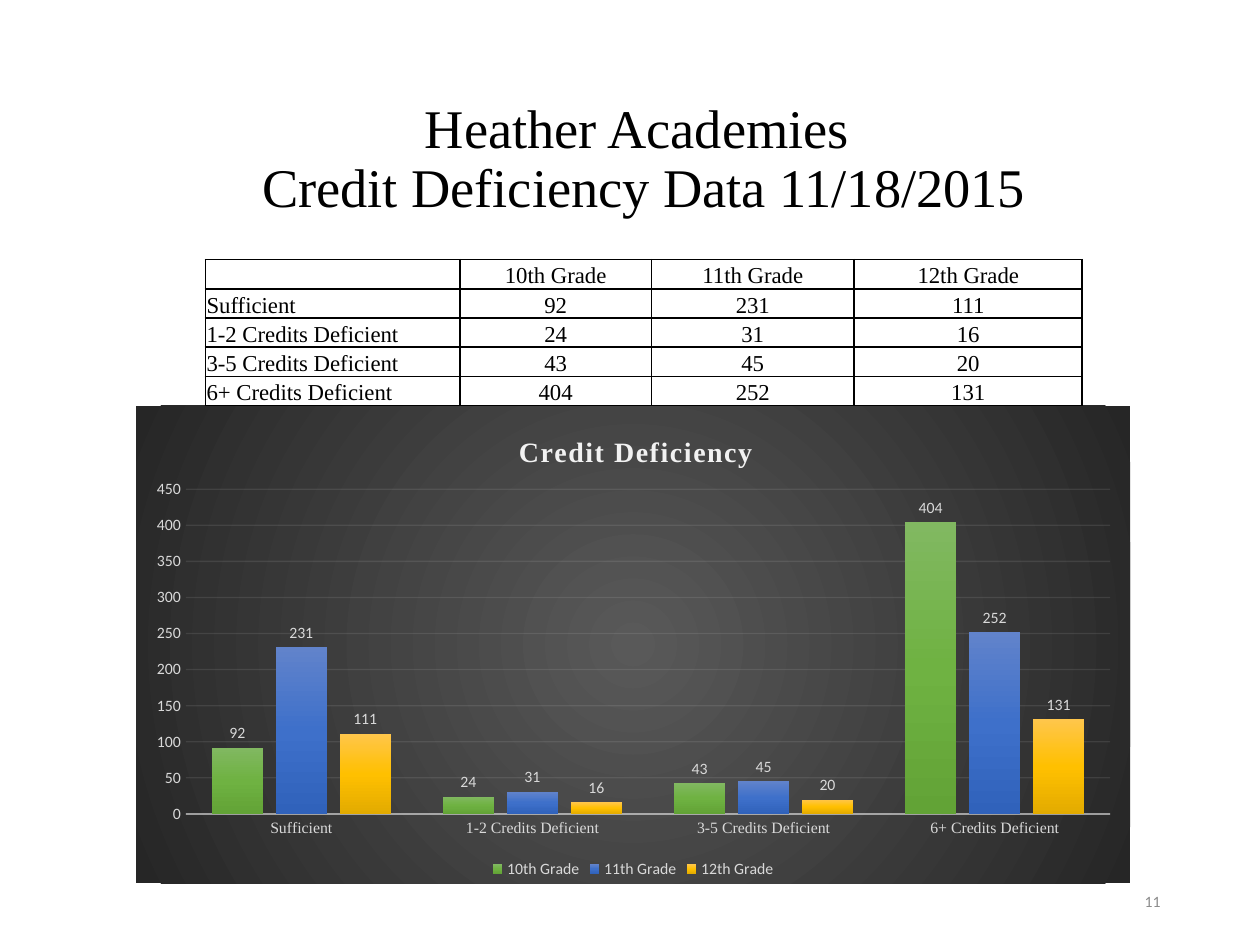
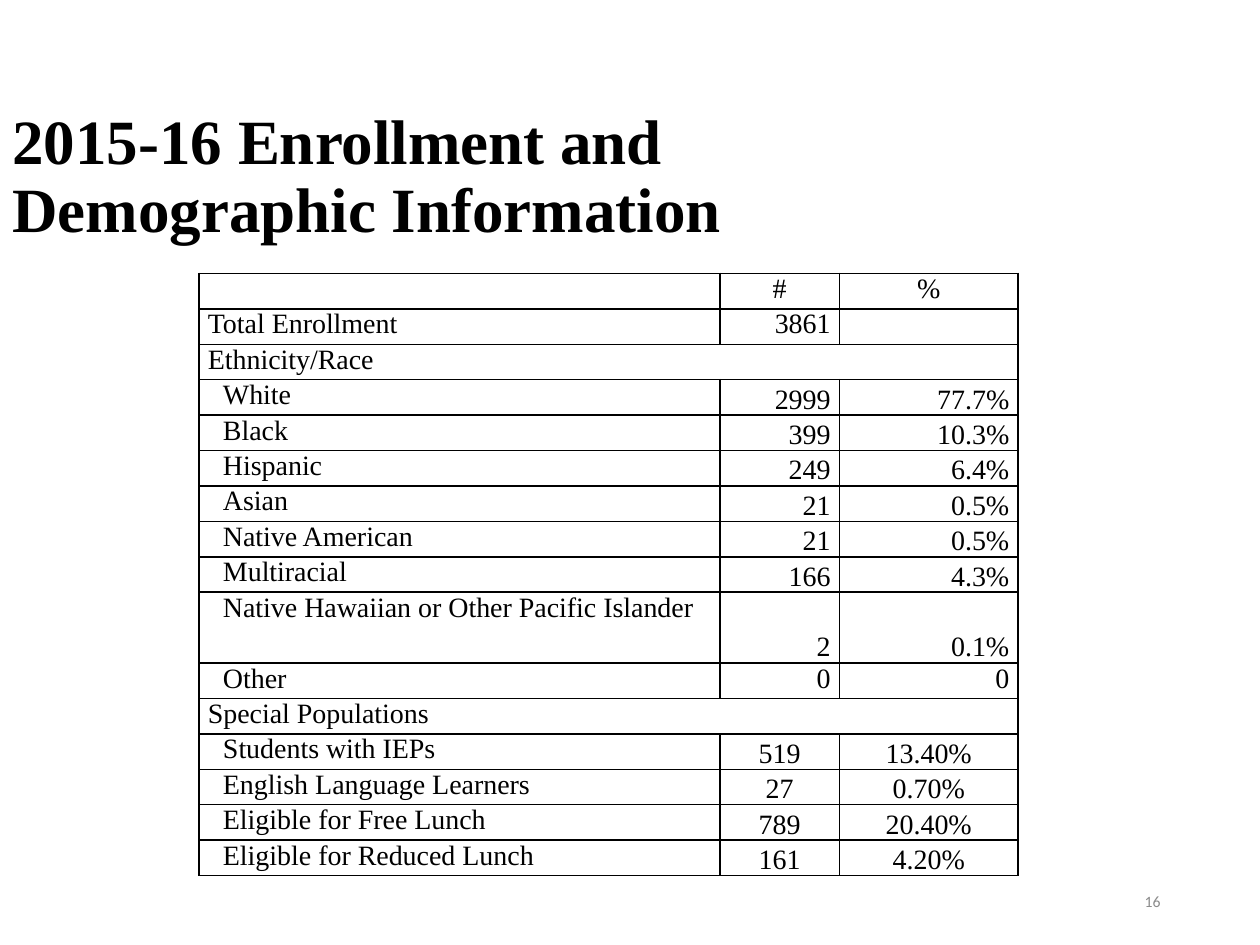
from dataclasses import dataclass

from lxml import etree
from pptx import Presentation
from pptx.chart.data import CategoryChartData
from pptx.dml.color import RGBColor
from pptx.enum.chart import XL_CHART_TYPE, XL_LABEL_POSITION, XL_LEGEND_POSITION, XL_TICK_MARK
from pptx.enum.text import MSO_ANCHOR, PP_ALIGN
from pptx.oxml.ns import qn
from pptx.util import Inches, Pt

LEFT, CENTER, RIGHT = PP_ALIGN.LEFT, PP_ALIGN.CENTER, PP_ALIGN.RIGHT
TOP, MIDDLE, BOTTOM = MSO_ANCHOR.TOP, MSO_ANCHOR.MIDDLE, MSO_ANCHOR.BOTTOM
NO_TICK = XL_TICK_MARK.NONE
COLUMNS = XL_CHART_TYPE.COLUMN_CLUSTERED
LEGEND_BOTTOM = XL_LEGEND_POSITION.BOTTOM
OUTSIDE_END = XL_LABEL_POSITION.OUTSIDE_END

SERIF, SANS = "Times New Roman", "Calibri"
BLACK, FOOTER_GRAY = "000000", "8C8C8C"
CHART_TEXT, CHART_LIGHT = "D9D9D9", "F2F2F2"
CHART_BACKGROUND = [(0, "595959"), (100, "262626")]

# The slide is a grid of 100 columns by 75 rows of square units
GRID_COLUMNS, GRID_ROWS = 100, 75
UNIT = Inches(0.1)

GRADES = ["10th Grade", "11th Grade", "12th Grade"]
GRADE_GRADIENTS = [
    [(0, "81B861"), (50, "6FB242"), (100, "62A336")],
    [(0, "6183CB"), (50, "3E70CA"), (100, "3062BB")],
    [(0, "FFC64B"), (50, "FFC000"), (100, "E3AB00")],
]
DEFICIENCY = {
    "Sufficient": [92, 231, 111],
    "1-2 Credits Deficient": [24, 31, 16],
    "3-5 Credits Deficient": [43, 45, 20],
    "6+ Credits Deficient": [404, 252, 131],
}
ETHNICITY = [
    ("White", "2999", "77.7%"),
    ("Black", "399", "10.3%"),
    ("Hispanic", "249", "6.4%"),
    ("Asian", "21", "0.5%"),
    ("Native American", "21", "0.5%"),
    ("Multiracial", "166", "4.3%"),
    ("Native Hawaiian or Other Pacific Islander", "2", "0.1%"),
]
SPECIAL_POPULATIONS = [
    ("Students with IEPs", "519", "13.40%"),
    ("English Language Learners", "27", "0.70%"),
    ("Eligible for Free Lunch", "789", "20.40%"),
    ("Eligible for Reduced Lunch", "161", "4.20%"),
]


@dataclass
class Box:
    left: float
    top: float
    width: float
    height: float

    def lengths(self):
        return [int(value * UNIT) for value in (self.left, self.top, self.width, self.height)]


@dataclass
class Entry:
    text: str = ""
    align: PP_ALIGN = LEFT
    anchor: MSO_ANCHOR = TOP
    indent: float = 0


FOOTER_BOX = Box(70.6, 69.5, 22.5, 4)


def color(hex_string):
    return RGBColor.from_string(hex_string)


def style_font(font, size, name=SERIF, hex_string=BLACK, bold=False):
    font.size, font.name, font.bold = Pt(size), name, bold
    font.color.rgb = color(hex_string)


def add_child(parent, tag, **attributes):
    return etree.SubElement(parent, qn(tag), {key: str(value) for key, value in attributes.items()})


# Text regions
def add_text(slide, box, text, size, name=SERIF, hex_string=BLACK, align=LEFT, bold=False, spacing=1.0):
    frame = slide.shapes.add_textbox(*box.lengths()).text_frame
    frame.word_wrap = True
    frame.vertical_anchor = MIDDLE
    paragraph = frame.paragraphs[0]
    paragraph.text = text
    paragraph.alignment = align
    paragraph.line_spacing = spacing
    for run in paragraph.runs:
        style_font(run.font, size, name, hex_string, bold)


def add_title(slide, box, text, size, **options):
    add_text(slide, box, text, size, spacing=0.9, **options)


def add_slide_number(slide, number):
    add_text(slide, FOOTER_BOX, str(number), 9, SANS, FOOTER_GRAY, RIGHT)


# Tables
def add_borders(cell):
    cell.fill.background()
    properties = cell._tc.get_or_add_tcPr()
    for position, side in enumerate(("a:lnL", "a:lnR", "a:lnT", "a:lnB")):
        border = add_child(properties, side, w=Pt(1))
        add_child(add_child(border, "a:solidFill"), "a:srgbClr", val=BLACK)
        properties.insert(position, border)


def fill_cell(cell, entry, size, margins):
    cell.margin_left, cell.margin_right, cell.margin_top, cell.margin_bottom = map(Inches, margins)
    cell.vertical_anchor = entry.anchor
    paragraph = cell.text_frame.paragraphs[0]
    paragraph.text = entry.text
    paragraph.alignment = entry.align
    if entry.indent:
        paragraph._p.get_or_add_pPr().set("marL", str(Inches(entry.indent)))
    for run in paragraph.runs:
        style_font(run.font, size)
    if not entry.text:
        add_child(paragraph._p, "a:endParaRPr", sz=size * 100)
    add_borders(cell)


def add_grid_table(slide, box, rows, column_shares, row_shares, size, margins):
    """Rows with a single entry span the whole width."""
    left, top, width, height = box.lengths()
    table = slide.shapes.add_table(len(rows), len(column_shares), left, top, width, height).table
    table.first_row = table.horz_banding = False
    for column, share in zip(table.columns, column_shares):
        column.width = int(width * share / sum(column_shares))
    for row, share in zip(table.rows, row_shares):
        row.height = int(height * share / sum(row_shares))
    last = len(column_shares) - 1
    for row_index, entries in enumerate(rows):
        padded = entries + [Entry()] * (last + 1 - len(entries))
        for column_index, entry in enumerate(padded):
            fill_cell(table.cell(row_index, column_index), entry, size, margins)
        if len(entries) == 1:
            table.cell(row_index, 0).merge(table.cell(row_index, last))


def add_deficiency_table(slide, box):
    def row(label, values):
        return [Entry(label, LEFT, BOTTOM)] + [Entry(str(value), CENTER, BOTTOM) for value in values]

    rows = [row("", GRADES)] + [row(label, values) for label, values in DEFICIENCY.items()]
    add_grid_table(slide, box, rows, [2.02, 1.52, 1.61, 1.81], [1] * len(rows), 13, (0.01, 0.01, 0.01, 0))


def add_demographics_table(slide, box):
    def group(records, align, anchor=BOTTOM):
        return [[Entry(label, indent=0.12), Entry(count, align, anchor), Entry(percent, align, anchor)]
                for label, count, percent in records]

    rows = [
        [Entry(), Entry("#", CENTER), Entry("%", CENTER)],
        [Entry("Total Enrollment"), Entry("3861", RIGHT), Entry()],
        [Entry("Ethnicity/Race")],
        *group(ETHNICITY, RIGHT),
        *group([("Other", "0", "0")], RIGHT, TOP),
        [Entry("Special Populations")],
        *group(SPECIAL_POPULATIONS, CENTER),
    ]
    row_shares = [2 if entries[0].text.startswith("Native Hawaiian") else 1 for entries in rows]
    add_grid_table(slide, box, rows, [4.14, 0.95, 1.42], row_shares, 16, (0.07, 0.07, 0, 0))


# Chart
def add_gradient(properties, stops):
    gradient = add_child(properties, "a:gradFill", rotWithShape=1)
    stop_list = add_child(gradient, "a:gsLst")
    for position, hex_string in stops:
        stop = add_child(stop_list, "a:gs", pos=position * 1000)
        add_child(stop, "a:srgbClr", val=hex_string)
    return gradient


def style_line(line, width, opacity):
    line.width = Pt(width)
    line.color.rgb = color(CHART_LIGHT)
    for line_color in line._get_or_add_ln().iter(qn("a:srgbClr")):
        add_child(line_color, "a:alpha", val=opacity * 1000)


def set_layout(parent, position, **shares):
    """Place a chart part by shares of the chart's size."""
    for old in parent.findall(qn("c:layout")):
        parent.remove(old)
    layout = add_child(parent, "c:layout")
    manual = add_child(layout, "c:manualLayout")
    if "w" in shares:
        add_child(manual, "c:layoutTarget", val="inner")
    for mode in ("c:xMode", "c:yMode"):
        add_child(manual, mode, val="edge")
    for key, share in shares.items():
        add_child(manual, f"c:{key}", val=share)
    parent.insert(position, layout)


def style_chart_frame(chart):
    chart_space = chart._chartSpace
    background = add_child(chart_space, "c:spPr")
    circle = add_child(add_gradient(background, CHART_BACKGROUND), "a:path", path="circle")
    add_child(circle, "a:fillToRect", l=50000, t=50000, r=50000, b=50000)
    add_child(add_child(background, "a:ln"), "a:noFill")
    chart_space.find(qn("c:chart")).addnext(background)

    title = chart.chart_title
    title.text_frame.text = "Credit Deficiency"
    run = title.text_frame.paragraphs[0].runs[0]
    style_font(run.font, 16, SERIF, CHART_LIGHT, True)
    run._r.get_or_add_rPr().set("spc", "100")
    title.include_in_layout = False
    set_layout(title._element, 1, x=0.38, y=0.05)
    set_layout(chart._chartSpace.chart.plotArea, 0, x=0.05, y=0.175, w=0.93, h=0.68)

    chart.has_legend = True
    chart.legend.position = LEGEND_BOTTOM
    chart.legend.include_in_layout = False
    style_font(chart.legend.font, 9, SANS, CHART_TEXT)


def style_axes(chart):
    for axis, name in ((chart.category_axis, SERIF), (chart.value_axis, SANS)):
        axis.major_tick_mark = axis.minor_tick_mark = NO_TICK
        style_font(axis.tick_labels.font, 9, name, CHART_TEXT)
    style_line(chart.category_axis.format.line, 1, 54)
    value_axis = chart.value_axis
    value_axis.minimum_scale, value_axis.maximum_scale, value_axis.major_unit = 0, 450, 50
    value_axis.format.line.fill.background()
    style_line(value_axis.major_gridlines.format.line, 0.75, 10)


def add_deficiency_chart(slide, box):
    data = CategoryChartData()
    data.categories = list(DEFICIENCY)
    for grade, values in zip(GRADES, zip(*DEFICIENCY.values())):
        data.add_series(grade, values)
    chart = slide.shapes.add_chart(COLUMNS, *box.lengths(), data).chart
    style_font(chart.font, 10, SANS)
    style_chart_frame(chart)
    style_axes(chart)

    plot = chart.plots[0]
    plot.gap_width, plot.overlap, plot.vary_by_categories = 100, -24, False
    for series, stops in zip(plot.series, GRADE_GRADIENTS):
        gradient = add_gradient(series._element.get_or_add_spPr(), stops)
        add_child(gradient, "a:lin", ang=90 * 60000, scaled=0)
        labels = series.data_labels
        labels.show_value = True
        labels.position = OUTSIDE_END
        style_font(labels.font, 9, SANS, CHART_TEXT)


# Slides
def add_blank_slide(presentation, number):
    slide = presentation.slides.add_slide(presentation.slide_layouts[6])
    add_slide_number(slide, number)
    return slide


def add_deficiency_slide(presentation):
    slide = add_blank_slide(presentation, 11)
    add_title(slide, Box(8, 7.5, 86.2, 10.5), "Heather Academies \vCredit Deficiency Data 11/18/2015",
              31.1, align=CENTER)
    add_deficiency_chart(slide, Box(10.8, 32.2, 78.9, 37.9))
    add_deficiency_table(slide, Box(16.3, 20.6, 69.6, 11.6))


def add_demographics_slide(presentation):
    slide = add_blank_slide(presentation, 16)
    add_title(slide, Box(0, 10, 100, 8.3), "2015-16 Enrollment and \vDemographic Information", 36, bold=True)
    add_demographics_table(slide, Box(15.8, 21.7, 65, 47.8))


def main():
    presentation = Presentation()
    presentation.slide_width = GRID_COLUMNS * UNIT
    presentation.slide_height = GRID_ROWS * UNIT
    add_deficiency_slide(presentation)
    add_demographics_slide(presentation)
    presentation.save("out.pptx")


if __name__ == "__main__":
    main()
